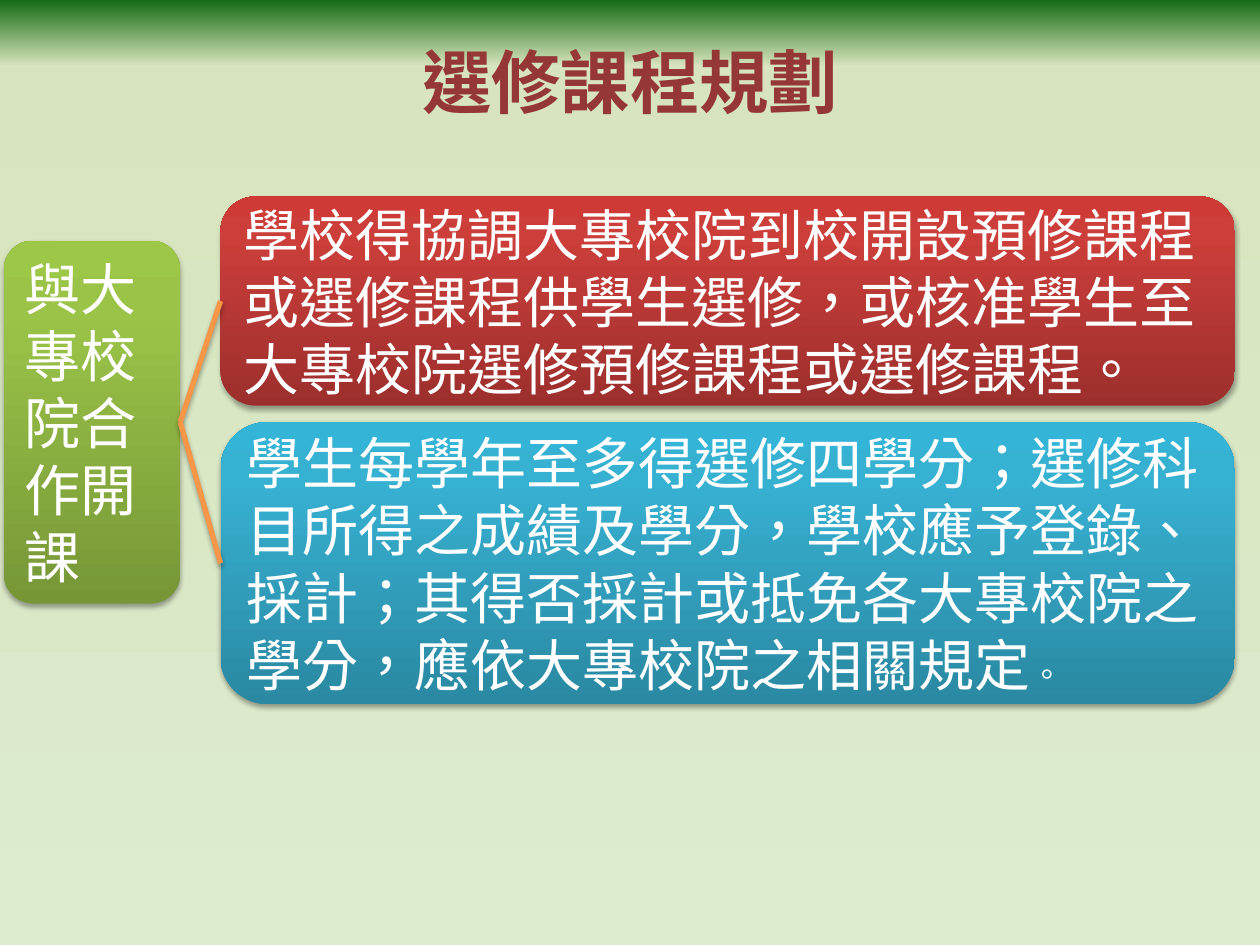
from copy import deepcopy
from dataclasses import dataclass

from lxml.etree import SubElement
from pptx import Presentation
from pptx.dml.color import RGBColor
from pptx.dml.fill import FillFormat
from pptx.enum.shapes import MSO_CONNECTOR, MSO_SHAPE
from pptx.enum.text import MSO_ANCHOR, PP_ALIGN
from pptx.oxml.ns import qn
from pptx.util import Pt

Stops = tuple[tuple[int, str], ...]


@dataclass(frozen=True)
class Theme:
    face: str = "Noto Sans CJK SC"
    latin: str = "Calibri"
    title: str = "953735"
    text: str = "FFFFFF"
    link: str = "F79646"
    shade: str = "000000"
    page: Stops = ((0, "DDEBCF"), (93, "D7E4BD"), (100, "156B13"))
    green: Stops = ((0, "779737"), (80, "9BC348"), (100, "9DC746"))
    red: Stops = ((0, "9C2F2D"), (80, "CB3E3A"), (100, "CE3B37"))
    blue: Stops = ((0, "2A88A2"), (80, "37B1D2"), (100, "34B4D6"))
    head: float = 39.6
    body: float = 32
    small: float = 18
    lead: float = 38.4


@dataclass(frozen=True)
class Box:
    left: float
    top: float
    width: float
    height: float
    stops: Stops
    text: str
    tail: str = ""


THEME = Theme()
ROOT = Box(2.2, 137.5, 100.8, 207.4, THEME.green, "與大專校院合作開課")
LEAVES = (
    Box(126, 112.3, 579.6, 119.5, THEME.red,
        "學校得協調大專校院到校開設預修課程或選修課程供學生選修，"
        "或核准學生至大專校院選修預修課程或選修課程。"),
    Box(126, 241.2, 579.6, 161.3, THEME.blue,
        "學生每學年至多得選修四學分；選修科目所得之成績及學分，"
        "學校應予登錄、採計；其得否採計或抵免各大專校院之學分，"
        "應依大專校院之相關規定", "。"),
)


def blend(fill: FillFormat, stops: Stops) -> None:
    """Fill with a three-stop gradient that runs from bottom to top."""
    fill.gradient()
    fill.gradient_angle = 90
    last = fill.gradient_stops[1]._gs
    last.addnext(deepcopy(last))
    for stop, (spot, hue) in zip(fill.gradient_stops, stops):
        stop.position = spot / 100
        stop.color.rgb = RGBColor.from_string(hue)


def shadow(item) -> None:
    props = item._element.spPr
    effects = props.find(qn("a:effectLst"))
    if effects is None:
        effects = SubElement(props, qn("a:effectLst"))
    outer = SubElement(effects, qn("a:outerShdw"), blurRad=str(Pt(3.1)),
                       dist=str(Pt(1.8)), dir="5400000", rotWithShape="0")
    color = SubElement(outer, qn("a:srgbClr"), val=THEME.shade)
    SubElement(color, qn("a:alpha"), val="35000")


def style(part, size: float, hue: str, face: str = THEME.face) -> None:
    """Set the font of a paragraph or run, East Asian face included."""
    font = part.font
    font.size = Pt(size)
    font.name = face
    font.color.rgb = RGBColor.from_string(hue)
    props = font._element
    props.set("lang", "zh-TW")
    SubElement(props, qn("a:ea"), typeface=face)


def draw(slide, box: Box):
    shape = slide.shapes.add_shape(
        MSO_SHAPE.ROUNDED_RECTANGLE,
        Pt(box.left), Pt(box.top), Pt(box.width), Pt(box.height))
    blend(shape.fill, box.stops)
    shape.line.fill.background()
    shape.shadow.inherit = False
    shadow(shape)
    frame = shape.text_frame
    frame.word_wrap = True
    frame.vertical_anchor = MSO_ANCHOR.MIDDLE
    para = frame.paragraphs[0]
    para.alignment = PP_ALIGN.LEFT
    para.line_spacing = Pt(THEME.lead)
    run = para.add_run()
    run.text = box.text
    if box.tail:
        style(run, THEME.body, THEME.text)
        end = para.add_run()
        end.text = box.tail
        style(end, THEME.small, THEME.text, THEME.latin)
    else:
        style(para, THEME.body, THEME.text)
    return shape


def join(slide, start, end) -> None:
    line = slide.shapes.add_connector(MSO_CONNECTOR.STRAIGHT, 0, 0, 0, 0)
    line.begin_connect(start, 3)
    line.end_connect(end, 1)
    line.line.width = Pt(3)
    line.line.color.rgb = RGBColor.from_string(THEME.link)
    shadow(line)


def main() -> None:
    deck = Presentation()
    deck.slide_width, deck.slide_height = Pt(720), Pt(540)
    slide = deck.slides.add_slide(deck.slide_layouts[5])
    blend(slide.background.fill, THEME.page)

    title = slide.shapes.title
    title.left, title.top = Pt(36), Pt(21.6)
    title.width, title.height = Pt(648), Pt(49.7)
    frame = title.text_frame
    frame.text = "選修課程規劃"
    frame.vertical_anchor = MSO_ANCHOR.MIDDLE
    para = frame.paragraphs[0]
    para.alignment = PP_ALIGN.CENTER
    style(para, THEME.head, THEME.title)
    para.font.bold = True

    root = draw(slide, ROOT)
    for leaf in [draw(slide, box) for box in LEAVES]:
        join(slide, root, leaf)
    deck.save("out.pptx")


if __name__ == "__main__":
    main()
